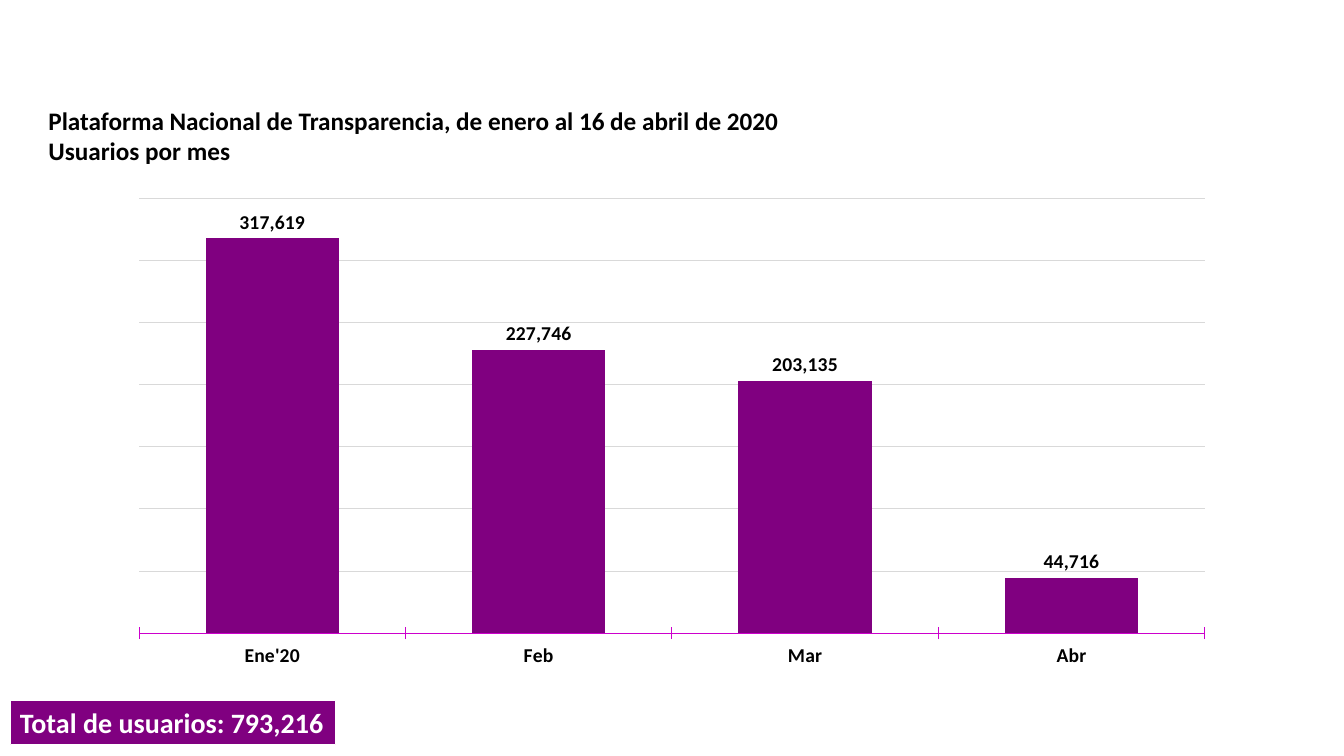
from lxml.etree import SubElement
from pptx import Presentation
from pptx.chart.data import CategoryChartData
from pptx.dml.color import RGBColor
from pptx.enum.chart import XL_CHART_TYPE, XL_LABEL_POSITION, XL_TICK_LABEL_POSITION, XL_TICK_MARK
from pptx.enum.shapes import MSO_SHAPE
from pptx.enum.text import MSO_ANCHOR, MSO_AUTO_SIZE, PP_ALIGN
from pptx.oxml.ns import qn
from pptx.util import Pt

EMU_PER_PX = 9144
FONT = "Calibri"
COLORS = {
    "text": "000000",
    "bar": "800080",
    "axis": "CC00CC",
    "grid": "D9D9D9",
    "white": "FFFFFF",
}
USERS_BY_MONTH = {"Ene'20": 317619, "Feb": 227746, "Mar": 203135, "Abr": 44716}
PLOT_AREA = {"x": 0.02, "y": 0.02, "w": 0.96, "h": 0.89}


def px(*lengths):
    """Turn whole pixels into EMU."""
    return [length * EMU_PER_PX for length in lengths]


def color(name):
    """Look up a palette colour."""
    return RGBColor.from_string(COLORS[name])


def style_font(font, size, ink="text", bold=True):
    """Apply the slide's typeface to a font."""
    font.name = FONT
    font.size = Pt(size)
    font.bold = bold
    font.color.rgb = color(ink)


def style_line(line, ink):
    """Draw a thin line in a palette colour."""
    line.color.rgb = color(ink)
    line.width = Pt(0.75)


def write_text(frame, text, size, ink="text"):
    """Fill a frame with left-aligned bold paragraphs, one per line of text."""
    frame.text = text
    frame.word_wrap = False
    frame.auto_size = MSO_AUTO_SIZE.SHAPE_TO_FIT_TEXT
    frame.vertical_anchor = MSO_ANCHOR.TOP
    for paragraph in frame.paragraphs:
        paragraph.alignment = PP_ALIGN.LEFT
        paragraph.space_before = Pt(0)
        style_font(paragraph.font, size, ink)


class UsersSlide:
    """Hold the current slide and draw its elements in one style."""

    def __init__(self, presentation):
        """Add a title-only slide."""
        self.slide = presentation.slides.add_slide(presentation.slide_layouts[5])

    def title(self, text, left, top, width, height):
        """Place and format the title."""
        heading = self.slide.shapes.title
        heading.left, heading.top, heading.width, heading.height = px(left, top, width, height)
        write_text(heading.text_frame, text, size=18)

    def banner(self, text, left, top, width, height):
        """Add a filled rectangle with white text."""
        total = self.slide.shapes.add_shape(MSO_SHAPE.RECTANGLE, *px(left, top, width, height))
        total.shadow.inherit = False
        total.fill.solid()
        total.fill.fore_color.rgb = color("bar")
        style_line(total.line, "white")
        write_text(total.text_frame, text, size=20, ink="white")

    def column_chart(self, values, left, top, width, height):
        """Add a labelled column chart."""
        data = CategoryChartData(number_format="#,##0")
        data.categories = list(values)
        data.add_series("Series 1", list(values.values()))
        chart = self.slide.shapes.add_chart(
            XL_CHART_TYPE.COLUMN_CLUSTERED, *px(left, top, width, height), data
        ).chart
        chart.has_title = False
        chart.has_legend = False
        style_font(chart.font, 14, bold=False)

        months = chart.category_axis
        months.major_tick_mark = XL_TICK_MARK.CROSS
        months.tick_label_position = XL_TICK_LABEL_POSITION.LOW
        style_font(months.tick_labels.font, 14)
        style_line(months.format.line, "axis")

        users = chart.value_axis
        users.minimum_scale, users.maximum_scale, users.major_unit = 0, 350000, 50000
        users.visible = False
        users.has_major_gridlines = True
        style_line(users.major_gridlines.format.line, "grid")

        plot = chart.plots[0]
        plot.gap_width = 100
        plot.vary_by_categories = False
        bars = plot.series[0]
        bars.format.fill.solid()
        bars.format.fill.fore_color.rgb = color("bar")

        labels = bars.data_labels
        labels.show_value = True
        labels.position = XL_LABEL_POSITION.OUTSIDE_END
        labels.number_format = "#,##0"
        labels.number_format_is_linked = False
        style_font(labels.font, 14)
        self.fix_plot_area(chart)

    def fix_plot_area(self, chart):
        """Pin the inner plot area to fractions of the chart."""
        plot_area = chart.element.find(".//" + qn("c:plotArea"))
        layout = SubElement(plot_area, qn("c:layout"))
        plot_area.insert(0, layout)
        manual = SubElement(layout, qn("c:manualLayout"))
        settings = {"layoutTarget": "inner", "xMode": "edge", "yMode": "edge", **PLOT_AREA}
        for tag, value in settings.items():
            SubElement(manual, qn("c:" + tag)).set("val", str(value))


def main():
    """Build and save the slide."""
    presentation = Presentation()
    presentation.slide_width, presentation.slide_height = px(1333, 750)
    slide = UsersSlide(presentation)
    slide.column_chart(USERS_BY_MONTH, 116, 187, 1101, 485)
    slide.title(
        "Plataforma Nacional de Transparencia, de enero al 16 de abril de 2020\nUsuarios por mes",
        38, 99, 762, 71,
    )
    slide.banner("Total de usuarios: 793,216", 10, 695, 323, 44)
    presentation.save("out.pptx")


if __name__ == "__main__":
    main()
